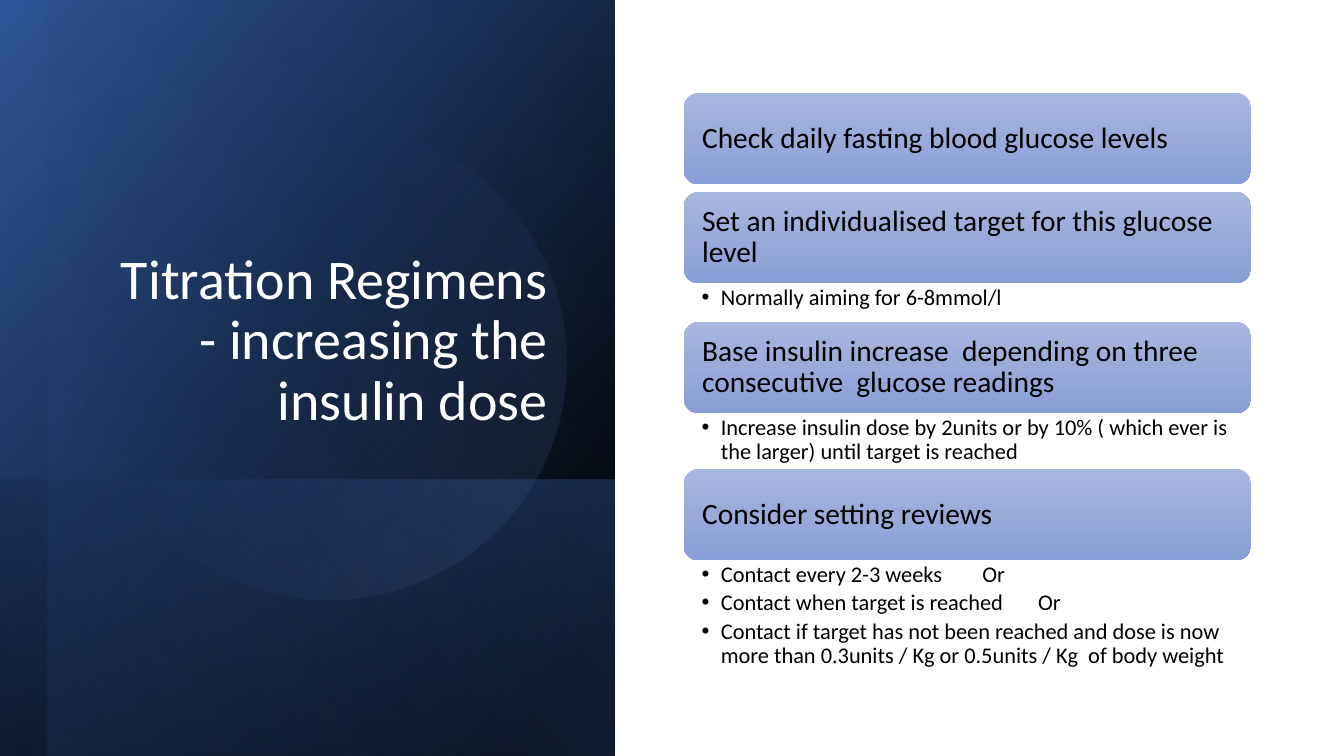
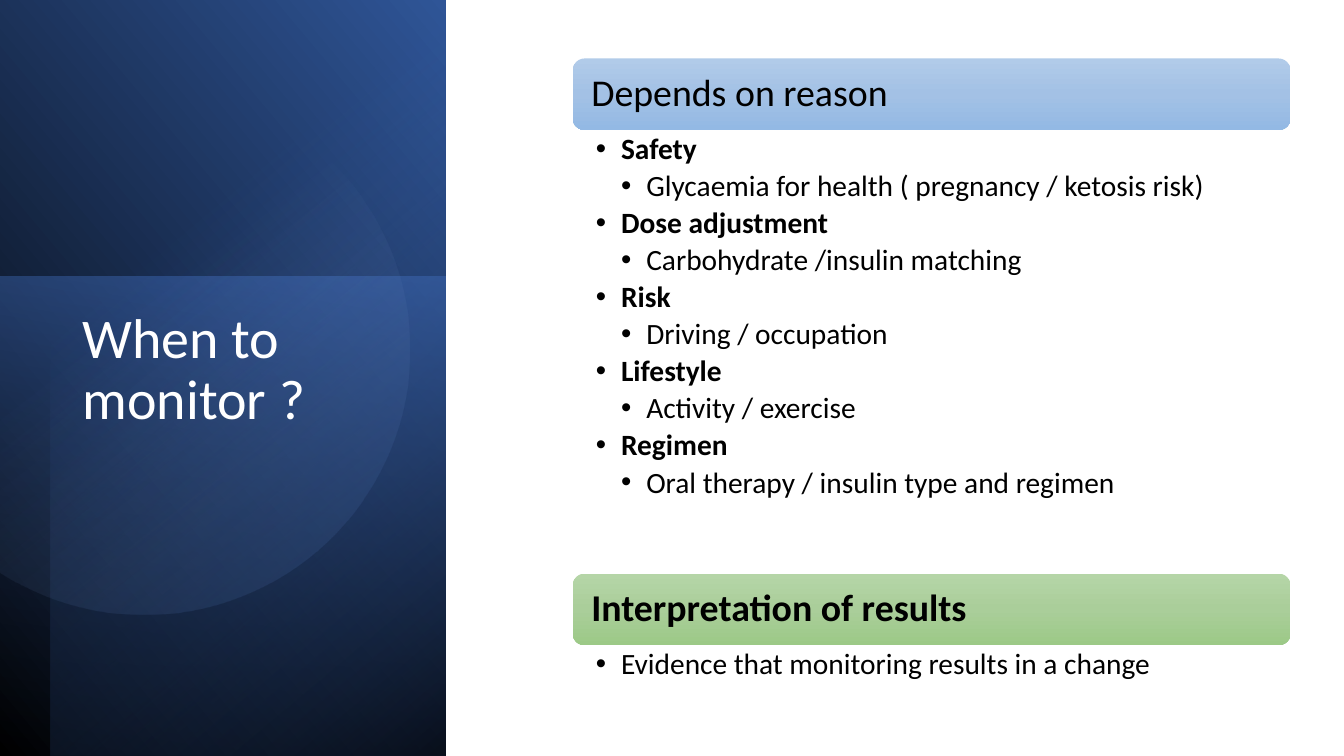
import math

from lxml import etree
from pptx import Presentation
from pptx.dml.color import RGBColor
from pptx.enum.shapes import MSO_SHAPE
from pptx.enum.text import MSO_ANCHOR, MSO_AUTO_SIZE, PP_ALIGN
from pptx.oxml.ns import qn
from pptx.util import Inches, Pt

RECTANGLE, ROUNDED, OVAL = MSO_SHAPE.RECTANGLE, MSO_SHAPE.ROUNDED_RECTANGLE, MSO_SHAPE.OVAL
LEFT, RIGHT = PP_ALIGN.LEFT, PP_ALIGN.RIGHT
TOP, MIDDLE, BOTTOM = MSO_ANCHOR.TOP, MSO_ANCHOR.MIDDLE, MSO_ANCHOR.BOTTOM
FONT = "Calibri"
BLACK, WHITE = "000000", "FFFFFF"
ACCENT, DEEP_BLUE, NAVY, PALE_BLUE = "4472C4", "2F5597", "203864", "8FAADC"
INDIGO = [(0, "A8B7DF", 100), (50, "9AABD9", 100), (100, "889ED7", 100)]
SKY = [(0, "B1CBE9", 100), (50, "A3C1E5", 100), (100, "93B9E4", 100)]
GREEN = [(0, "B5D5A7", 100), (50, "AACE9A", 100), (100, "9CC987", 100)]
TITLE_SIZE = 40


def paint(shape, stops, angle):
    """Fill with a gradient of (position, colour, opacity) stops; no line or shadow."""
    shape.shadow.inherit = False
    shape.line.fill.background()
    shape.fill.gradient()
    gradient = shape._element.spPr.find(qn("a:gradFill"))
    for child in list(gradient):
        gradient.remove(child)
    stop_list = etree.SubElement(gradient, qn("a:gsLst"))
    for position, colour, opacity in stops:
        stop = etree.SubElement(stop_list, qn("a:gs"), pos=str(position * 1000))
        tint = etree.SubElement(stop, qn("a:srgbClr"), val=colour)
        etree.SubElement(tint, qn("a:alpha"), val=str(opacity * 1000))
    etree.SubElement(gradient, qn("a:lin"), ang=str(angle * 60000), scaled="0")


def write(frame, lines, size, colour=BLACK, align=LEFT, anchor=TOP, insets=(0.1, 0.05, 0.1, 0.05)):
    """Write (text, bullet level, bold) lines; level 0 has no bullet."""
    frame.word_wrap = True
    frame.auto_size = MSO_AUTO_SIZE.NONE
    frame.vertical_anchor = anchor
    (frame.margin_left, frame.margin_top,
     frame.margin_right, frame.margin_bottom) = [Inches(inset) for inset in insets]
    frame.text = "\n".join(text for text, level, bold in lines)
    for para, (text, level, bold) in zip(frame.paragraphs, lines):
        para.alignment = align
        para.line_spacing = 0.9
        para.space_before = Pt(0)
        para.space_after = Pt(round(size * 0.18, 1) if level else 0)
        if level:
            step = Inches(round(size * 0.012, 2))
            properties = para._p.get_or_add_pPr()
            properties.set("marL", str(step * level))
            properties.set("indent", str(-step))
            etree.SubElement(properties, qn("a:buFont"), typeface="Arial")
            etree.SubElement(properties, qn("a:buChar"), char="•")
        for span in para.runs:
            span.font.name = FONT
            span.font.size = Pt(size)
            span.font.bold = bold
            span.font.color.rgb = RGBColor.from_string(colour)


# Panels: shape, box, rotation, flipped, stops, angle
# Cards: heading, bold, gradient, room below, bullets
reasons = [
    ("Safety", "Glycaemia for health ( pregnancy / ketosis risk)"),
    ("Dose adjustment", "Carbohydrate /insulin matching"),
    ("Risk", "Driving / occupation"),
    ("Lifestyle", "Activity / exercise"),
    ("Regimen", "Oral therapy / insulin type and regimen"),
]
reason_lines = []
for reason, example in reasons:
    reason_lines += [(reason, 1, True), (example, 2, False)]

titration = {
    "title": "Titration Regimens\v- increasing the insulin dose",
    "title_box": (0.9, 0.64, 4.63, 3.7), "align": RIGHT, "anchor": BOTTOM,
    "panels": [
        (RECTANGLE, (-0.7, 0.7, 7.5, 6.1), 90, True,
         [(8, BLACK, 100), (100, DEEP_BLUE, 100)], 50),
        (RECTANGLE, (1.67, 3.08, 2.74, 6.1), 90, True,
         [(2, ACCENT, 29), (100, BLACK, 30)], 130),
        (RECTANGLE, (-0.46, 0.93, 7.5, 5.63), 90, True,
         [(0, BLACK, 0), (99, ACCENT, 11)], 130),
        (OVAL, (0.9, 1.23, 4.72, 4.72), 101.6, False,
         [(39, ACCENT, 0), (100, PALE_BLUE, 15)], 290),
    ],
    "card_box": (6.78, 0.92, 5.63, 0.91), "heading_size": 21, "bullet_size": 16,
    "heading_inset": 0.14, "bullet_insets": (0.18, 0.03, 0.16, 0.03),
    "cards": [
        ("Check daily fasting blood glucose levels", False, INDIGO, 0.07, []),
        ("Set an individualised target for this glucose level", False, INDIGO, 0.38,
         [("Normally aiming for 6-8mmol/l", 1, False)]),
        ("Base insulin increase  depending on three consecutive  glucose readings",
         False, INDIGO, 0.55,
         [("Increase insulin dose by 2units or by 10% ( which ever is the larger) "
           "until target is reached", 1, False)]),
        ("Consider setting reviews", False, INDIGO, 1.16,
         [("Contact every 2-3 weeks        Or", 1, False),
          ("Contact when target is reached       Or", 1, False),
          ("Contact if target has not been reached and dose is now more than "
           "0.3units / Kg or 0.5units / Kg  of body weight", 1, False)]),
    ],
}
monitoring = {
    "title": "When to monitor ?",
    "title_box": (0.72, 3.03, 3.15, 3.36), "align": LEFT, "anchor": TOP,
    "panels": [
        (RECTANGLE, (-1.55, 1.55, 7.52, 4.42), 90, True,
         [(0, BLACK, 100), (100, DEEP_BLUE, 100)], 310),
        (RECTANGLE, (-0.17, 2.91, 4.76, 4.42), 270, False,
         [(0, ACCENT, 50), (100, NAVY, 0)], 190),
        (RECTANGLE, (-1.29, 1.79, 7.5, 3.92), 270, True,
         [(0, BLACK, 59), (69, ACCENT, 0)], 220),
    ],
    "card_box": (5.68, 0.58, 7.12, 0.71), "heading_size": 27, "bullet_size": 21,
    "heading_inset": 0.15, "bullet_insets": (0.23, 0.04, 0.21, 0.04),
    "cards": [
        ("Depends on reason", False, SKY, 4.4, reason_lines),
        ("Interpretation of results", True, GREEN, 0.49,
         [("Evidence that monitoring results in a change", 1, False)]),
    ],
}

deck = Presentation()
deck.slide_width, deck.slide_height = Inches(13.33), Inches(7.5)
title_only = deck.slide_layouts[5]

for content in (titration, monitoring):
    page = deck.slides.add_slide(title_only)
    title = page.shapes.title

    for kind, box, rotation, flipped, stops, angle in content["panels"]:
        panel = page.shapes.add_shape(kind, *[Inches(length) for length in box])
        panel.rotation = rotation
        if flipped:
            panel._element.spPr.find(qn("a:xfrm")).set("flipH", "1")
        paint(panel, stops, angle)

    if content is monitoring:
        # Disc cut off at the left slide edge
        centre_x, centre_y, radius = 1.43, 3.47, 2.63
        limit = math.acos(-centre_x / radius)
        steps = 90
        turns = [limit * (2 * step / steps - 1) for step in range(steps + 1)]
        points = [(Inches(centre_x + radius * math.cos(turn)),
                   Inches(centre_y + radius * math.sin(turn))) for turn in turns]
        outline = page.shapes.build_freeform(*points[0])
        outline.add_line_segments(points[1:], close=True)
        paint(outline.convert_to_shape(), [(39, PALE_BLUE, 0), (100, DEEP_BLUE, 26)], 52)

    title.left, title.top, title.width, title.height = [
        Inches(length) for length in content["title_box"]]
    write(title.text_frame, [(content["title"], 0, False)], TITLE_SIZE, WHITE,
          content["align"], content["anchor"])
    page.shapes._spTree.append(title._element)  # in front of the panels

    left, top, width, height = content["card_box"]
    for heading, bold, stops, room, bullets in content["cards"]:
        card = page.shapes.add_shape(ROUNDED, Inches(left), Inches(top),
                                     Inches(width), Inches(height))
        paint(card, stops, 90)
        write(card.text_frame, [(heading, 0, bold)], content["heading_size"],
              anchor=MIDDLE, insets=[content["heading_inset"]] * 4)
        top += height
        if bullets:
            details = page.shapes.add_textbox(Inches(left), Inches(top),
                                              Inches(width), Inches(room))
            write(details.text_frame, bullets, content["bullet_size"],
                  insets=content["bullet_insets"])
        top += room

deck.save("out.pptx")
